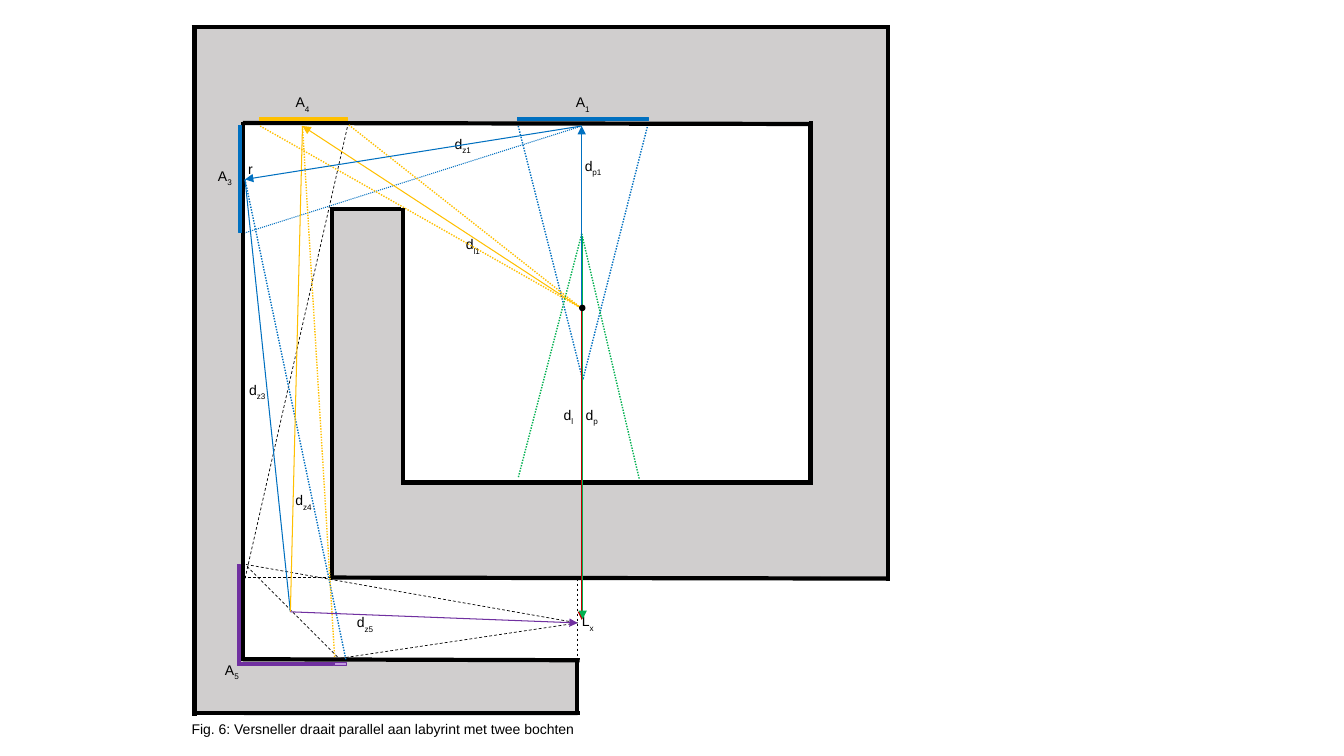
from dataclasses import dataclass

from pptx import Presentation
from pptx.dml.color import RGBColor
from pptx.enum.dml import MSO_LINE_DASH_STYLE as Dash
from pptx.enum.shapes import MSO_CONNECTOR, MSO_SHAPE
from pptx.enum.text import MSO_ANCHOR, PP_ALIGN
from pptx.oxml.ns import qn
from pptx.util import Inches, Pt
from lxml.etree import SubElement

BLACK, CONCRETE = "000000", "D0CECE"
BLUE, GOLD, GREEN = "0070C0", "FFC000", "00B050"
PURPLE, LILAC, RED = "7030A0", "C198E0", "C00000"

# Key points of the floor plan, as (column, row)
ISOCENTRE = (38.7, 28.1)
A1_MID, A3_MID, A4_MID = (38.7, 10), (5.3, 15.3), (11, 10)
BEND, MAZE_EXIT = (9.8, 58.2), (38.3, 59.3)


@dataclass
class Box:
    """An area of the page divided into square grid cells."""
    left: float
    top: float
    cell: float

    def point(self, column, row):
        return (Inches(self.left + column * self.cell),
                Inches(self.top + row * self.cell))

    def size(self, columns, rows):
        return Inches(columns * self.cell), Inches(rows * self.cell)


def colour(value):
    return RGBColor.from_string(value)


def add_block(page, box, area, fill, line=None, kind=MSO_SHAPE.RECTANGLE,
              weight=0.75):
    column, row, columns, rows = area
    block = page.shapes.add_shape(kind, *box.point(column, row),
                                  *box.size(columns, rows))
    block.shadow.inherit = False
    block.fill.solid()
    block.fill.fore_color.rgb = colour(fill)
    if line:
        block.line.color.rgb = colour(line)
        block.line.width = Pt(weight)
    else:
        block.line.fill.background()
    return block


def add_line(page, box, start, end, tint, weight, dash=None, arrow=False):
    line = page.shapes.add_connector(MSO_CONNECTOR.STRAIGHT,
                                     *box.point(*start), *box.point(*end))
    line.line.color.rgb = colour(tint)
    line.line.width = Pt(weight)
    if dash:
        line.line.dash_style = dash
    properties = line.element.spPr
    if arrow:
        SubElement(properties.find(qn("a:ln")), qn("a:tailEnd"), type="triangle")
    SubElement(properties, qn("a:effectLst"))


def write(shape, text, subscript="", align=PP_ALIGN.LEFT,
          anchor=MSO_ANCHOR.TOP, wrap=True, inset=0):
    frame = shape.text_frame
    frame.margin_left = frame.margin_right = 0
    frame.margin_top = frame.margin_bottom = Inches(inset)
    frame.word_wrap = wrap
    frame.vertical_anchor = anchor
    para = frame.paragraphs[0]
    para.alignment = align
    para.font.name = "Arial"
    para.font.size = Pt(10)
    para.font.color.rgb = colour(BLACK)
    para.add_run().text = text
    if subscript:
        span = para.add_run()
        span.text = subscript
        span.font._element.set("baseline", "-30000")


def draw_concrete(page, box):
    for area in [(0.4, 9.4, 4.9, 58.8), (20.1, 45.4, 42.3, 9.5),
                 (14, 18.2, 7.1, 36.6), (61.5, 9.4, 7.7, 45.3),
                 (5.2, 62.9, 33.1, 5.6), (0.5, 0.1, 68.7, 9.6)]:
        add_block(page, box, area, CONCRETE)


def draw_surface_names(page, box):
    for number, column, row in [("5", 2.6, 62.7), ("4", 9.6, 6.4),
                                ("1", 37.4, 6.4), ("3", 1.9, 13.7)]:
        label = add_block(page, box, (column, row, 2.8, 2.8), CONCRETE)
        write(label, "A", number, PP_ALIGN.CENTER, MSO_ANCHOR.MIDDLE)


def draw_distance_names(page, box):
    for text, subscript, column, row, columns, rows, wrap in [
            ("d", "l1", 27.2, 20.9, 2.6, 2.5, True),
            ("d", "p1", 39, 13.1, 2.4, 1.7, True),
            ("d", "l", 36.9, 37.8, 1.7, 2.2, True),
            ("d", "p", 39.1, 37.8, 2, 2.2, True),
            ("r", "", 5.6, 13.4, 0.8, 1.6, True),
            ("L", "x", 38.7, 58.3, 1.8, 2.3, False),
            ("d", "z1", 26.1, 10.9, 2.2, 2.2, False),
            ("d", "z3", 5.7, 35.3, 2.2, 2.2, False),
            ("d", "z4", 10.3, 46.3, 2.2, 2.2, False),
            ("d", "z5", 16.4, 58.4, 2.2, 2.2, False)]:
        label = page.shapes.add_textbox(*box.point(column, row),
                                        *box.size(columns, rows))
        write(label, text, subscript, wrap=wrap)


def draw_walls(page, box):
    for start, end in [
            # Outer walls
            ((69.1, 0.1), (69.1, 55.1)), ((0.3, 68.5), (0.3, 0)),
            ((0, 0.2), (69.3, 0.2)), ((38.5, 68.2), (0.1, 68.2)),
            # Treatment room
            ((61.3, 9.8), (5.1, 9.7)), ((61.3, 45.6), (61.3, 9.6)),
            ((61.4, 45.6), (61.4, 9.5)), ((20.8, 45.4), (61.4, 45.4)),
            ((20.9, 45.3), (61.4, 45.3)),
            # Inner pier and maze
            ((13.8, 18.2), (20.8, 18.2)), ((21, 18.1), (21, 45.6)),
            ((13.9, 18), (13.9, 54.8)), ((69.2, 54.9), (13.8, 54.8)),
            ((5.1, 63.1), (5.1, 9.6)), ((5.1, 62.9), (38.5, 63)),
            ((38.2, 62.9), (38.2, 68.2))]:
        add_line(page, box, start, end, BLACK, 3)


def draw_surfaces(page, box):
    thickness = 0.3
    for column, row, length, fill, line, angle in [
            (38.8, 9.35, 13, BLUE, BLUE, 0), (11.1, 9.35, 8.8, GOLD, GOLD, 0),
            (4.8, 15.25, 10.6, BLUE, BLUE, 90),
            (9.4, 63.35, 9.4, PURPLE, PURPLE, 0),
            (4.7, 58.55, 10, PURPLE, PURPLE, 90),
            (14.8, 63.35, 1.2, LILAC, PURPLE, 0)]:
        area = (column - length / 2, row - thickness / 2, length, thickness)
        add_block(page, box, area, fill, line).rotation = angle


def draw_sight_lines(page, box):
    for start, end in [
            ((38.3, 54.9), (38.3, 62.9)), ((5.1, 54.8), (14, 54.8)),
            ((5.3, 54.9), (15.5, 9.9)), ((5.4, 53.5), MAZE_EXIT),
            ((14.8, 62.8), MAZE_EXIT), ((5.5, 53.7), (14.6, 62.8))]:
        add_line(page, box, start, end, BLACK, 0.5, Dash.DASH)


def draw_beam_edges(page, box):
    for start, end, tint, weight in [
            ((15.3, 62.9), A3_MID, BLUE, 1), (A1_MID, (5.3, 20.6), BLUE, 0.75),
            ((45.2, 10.1), (38.8, 35.2), BLUE, 1),
            ((32.4, 10), (38.8, 35.2), BLUE, 1),
            ((6.8, 10), ISOCENTRE, GOLD, 1), ((15.6, 9.9), ISOCENTRE, GOLD, 1),
            (A4_MID, (14.2, 62.8), GOLD, 1),
            ((38.7, 20.7), (32.4, 44.9), GREEN, 1),
            ((38.7, 20.7), (44.4, 45), GREEN, 1)]:
        add_line(page, box, start, end, tint, weight, Dash.ROUND_DOT)


def draw_rays(page, box):
    for start, end, tint, arrow in [
            (BEND, A3_MID, BLUE, False), (A4_MID, BEND, GOLD, False),
            ((38.7, 28.3), (38.7, 59), RED, True),
            (ISOCENTRE, A1_MID, BLUE, True), (ISOCENTRE, A4_MID, GOLD, True),
            ((38.8, 20.9), (38.8, 58.9), GREEN, True),
            (BEND, MAZE_EXIT, PURPLE, True), (A1_MID, A3_MID, BLUE, True)]:
        add_line(page, box, start, end, tint, 0.75, arrow=arrow)
    add_block(page, box, (38.5, 27.8, 0.5, 0.5), BLACK, BLACK,
              MSO_SHAPE.OVAL, 1)


def draw_caption(page, box):
    caption = page.shapes.add_textbox(*box.point(0, 0), *box.size(43.8, 3.9))
    write(caption, "Fig. 6: Versneller draait parallel aan labyrint met twee bochten",
          inset=0.05)


def main():
    deck = Presentation()
    deck.slide_width, deck.slide_height = Inches(13.33), Inches(7.5)
    page = deck.slides.add_slide(deck.slide_layouts[6])
    plan = Box(left=1.9, top=0.25, cell=0.1)
    for draw in [draw_concrete, draw_surface_names, draw_distance_names,
                 draw_walls, draw_surfaces, draw_sight_lines,
                 draw_beam_edges, draw_rays]:
        draw(page, plan)
    draw_caption(page, Box(left=1.9, top=7.1, cell=0.1))
    deck.save("out.pptx")


if __name__ == "__main__":
    main()
